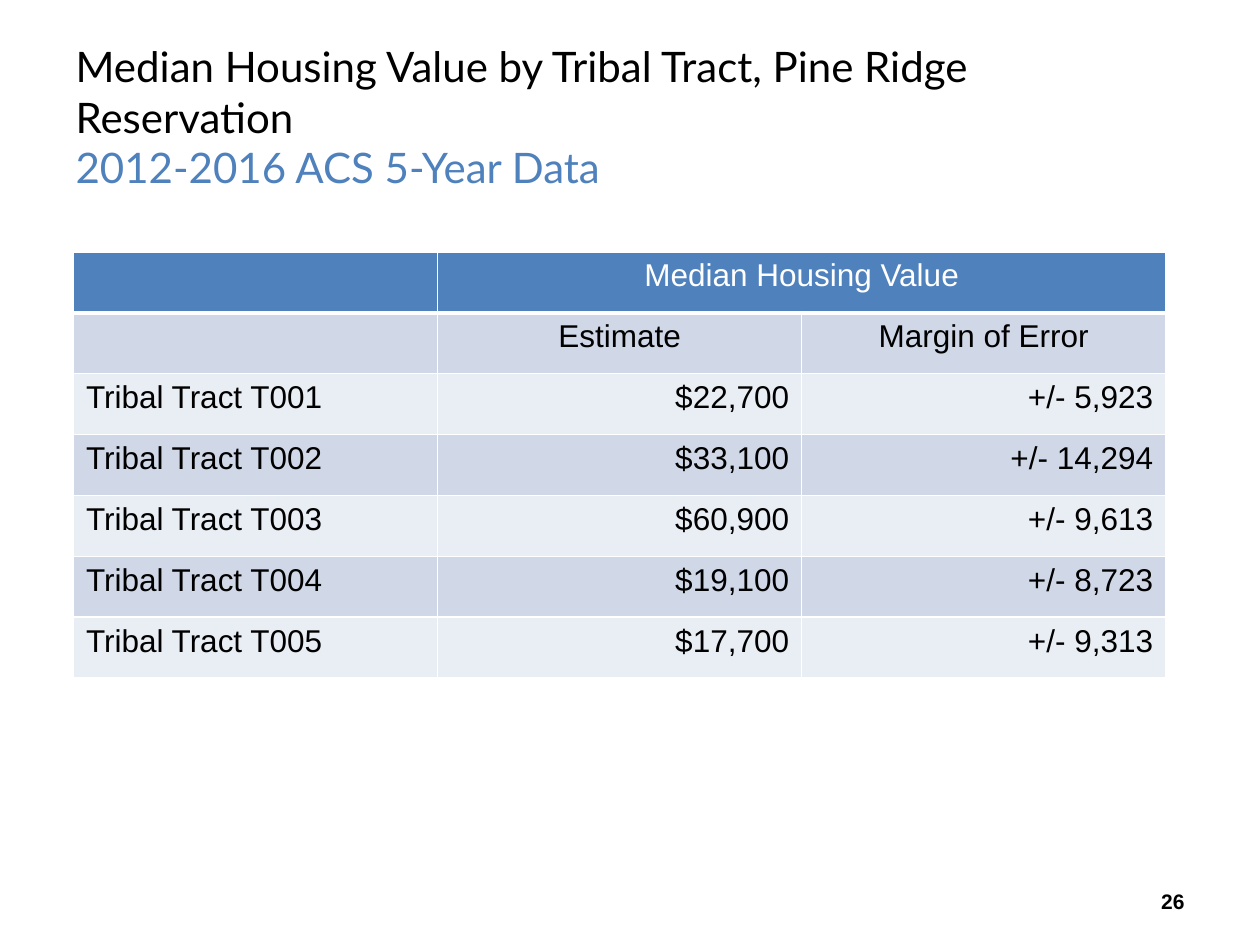
import pptx
import pptx.util
import pptx.dml.color
import pptx.enum.text
import pptx.oxml.ns
from lxml import etree

Cm, Pt = pptx.util.Cm, pptx.util.Pt
ALIGN = pptx.enum.text.PP_ALIGN
MIDDLE = pptx.enum.text.MSO_ANCHOR.MIDDLE

COLORS = {
    "text": "000000",
    "accent": "4F81BD",
    "dark": "D0D8E8",
    "light": "E9EDF4",
    "white": "FFFFFF",
}

ROWS = [
    ("", "Median Housing Value", ""),
    ("", "Estimate", "Margin of Error"),
    ("Tribal Tract T001", "$22,700", "+/- 5,923"),
    ("Tribal Tract T002", "$33,100", "+/- 14,294"),
    ("Tribal Tract T003", "$60,900", "+/- 9,613"),
    ("Tribal Tract T004", "$19,100", "+/- 8,723"),
    ("Tribal Tract T005", "$17,700", "+/- 9,313"),
]


def rgb(name):
    return pptx.dml.color.RGBColor.from_string(COLORS[name])


def style(para, font, size, color, align, bold=False):
    para.alignment = align
    para.font.name = font
    para.font.size = Pt(size)
    para.font.bold = bold
    para.font.color.rgb = rgb(color)


def add_title(slide, lines):
    title = slide.shapes.title
    title.left, title.top = Cm(1.27), Cm(0.76)
    title.width, title.height = Cm(22.86), Cm(3.18)
    frame = title.text_frame
    frame.auto_size = pptx.enum.text.MSO_AUTO_SIZE.NONE
    frame.vertical_anchor = MIDDLE
    para = frame.paragraphs[0]
    style(para, "Lato", 24, "text", ALIGN.LEFT)
    for i, (text, color) in enumerate(lines):
        if i:
            para.add_line_break()
        run = para.add_run()
        run.text = text
        run.font.color.rgb = rgb(color)


def add_border(cell, side, width):
    qn = pptx.oxml.ns.qn
    props = cell._tc.get_or_add_tcPr()
    line = etree.SubElement(props, qn(f"a:ln{side}"), w=str(Pt(width)))
    fill = etree.SubElement(line, qn("a:solidFill"))
    etree.SubElement(fill, qn("a:srgbClr"), val=COLORS["white"])


def fill_cell(cell, text, row, col):
    # Thick rule between the header and the body
    for side in "LRTB":
        thick = (row, side) in ((0, "B"), (1, "T"))
        add_border(cell, side, 3 if thick else 1)
    cell.fill.solid()
    band = "dark" if row % 2 else "light"
    cell.fill.fore_color.rgb = rgb(band if row else "accent")
    cell.text = text
    if col == 0:
        align = ALIGN.LEFT
    else:
        align = ALIGN.CENTER if row < 2 else ALIGN.RIGHT
    style(cell.text_frame.paragraphs[0], "Arial", 18,
          "text" if row else "white", align)


def add_grid(slide, rows):
    count, wide = len(rows), len(rows[0])
    table = slide.shapes.add_table(
        count, wide, Cm(1.48), Cm(5.08), Cm(22.02), Cm(8.59)).table
    for r, row in enumerate(rows):
        for c, text in enumerate(row):
            fill_cell(table.cell(r, c), text, r, c)
    table.cell(0, 1).merge(table.cell(0, 2))


def add_number(slide, text):
    box = slide.shapes.add_textbox(Cm(18.21), Cm(17.65), Cm(5.92), Cm(1.02))
    frame = box.text_frame
    frame.word_wrap = True
    frame.vertical_anchor = MIDDLE
    frame.text = text
    style(frame.paragraphs[0], "Arial", 12, "text", ALIGN.RIGHT, True)


def main():
    deck = pptx.Presentation()
    deck.slide_width, deck.slide_height = Cm(25.4), Cm(19.05)
    slide = deck.slides.add_slide(deck.slide_layouts[5])

    # Heading
    add_title(slide, [
        ("Median Housing Value by Tribal Tract, Pine Ridge Reservation",
         "text"),
        ("2012-2016 ACS 5-Year Data", "accent"),
    ])

    # Housing values
    add_grid(slide, ROWS)

    # Page number
    add_number(slide, "26")
    deck.save("out.pptx")


if __name__ == "__main__":
    main()
